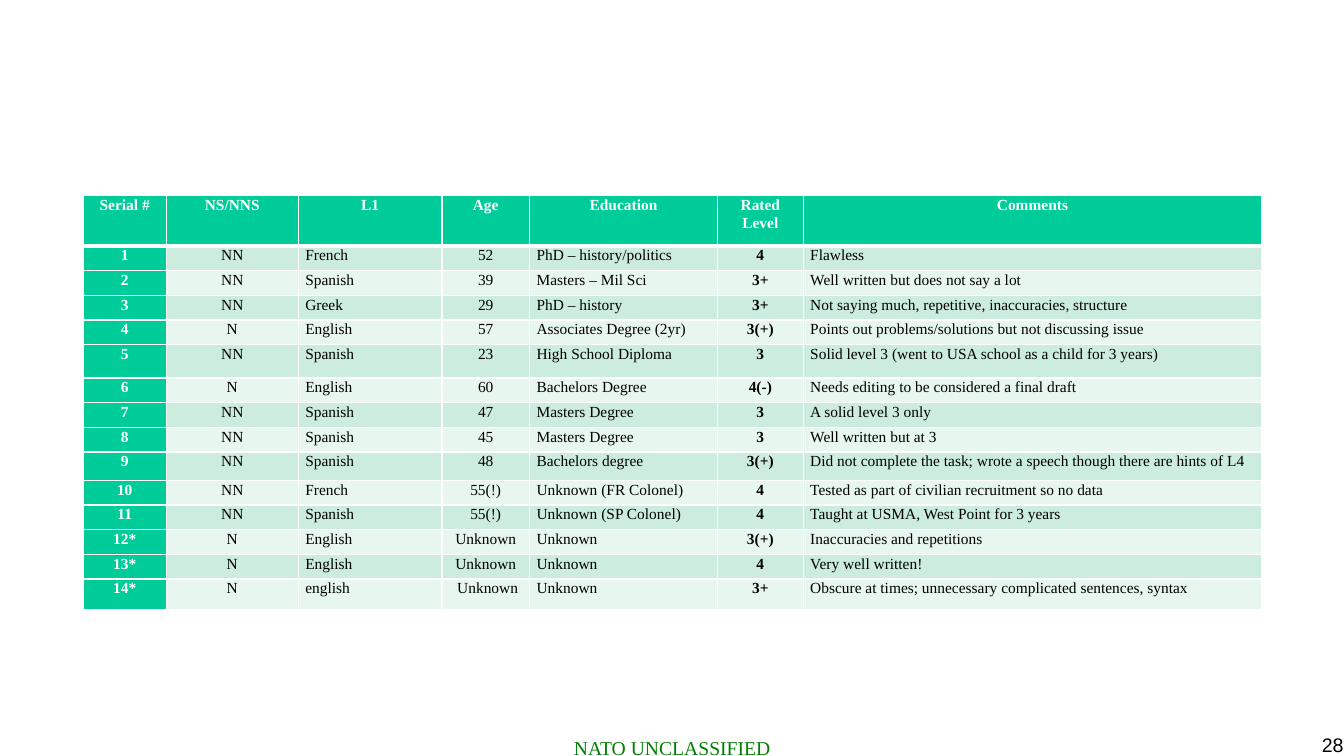
from dataclasses import dataclass

from lxml import etree
from pptx import Presentation
from pptx import util as u
from pptx.dml.color import RGBColor
from pptx.enum import text
from pptx.oxml import ns

PX = 4572  # EMU per px, 200 px to the inch


@dataclass(frozen=True)
class Theme:
    serif: str = "Times New Roman"
    sans: str = "Arial"
    white: str = "FFFFFF"
    black: str = "000000"
    marking: str = "008000"
    accent: str = "00CC99"
    bands: tuple = ("CCECDE", "E7F6EF")
    table_size: int = 11
    footer_size: int = 14
    thin: int = 1
    thick: int = 3


THEME = Theme()
LEFT, CENTER, RIGHT = text.PP_ALIGN.LEFT, text.PP_ALIGN.CENTER, text.PP_ALIGN.RIGHT

COLUMN_WIDTHS = (165, 262, 285, 174, 373, 170, 910)
COLUMN_ALIGNS = (CENTER, CENTER, LEFT, CENTER, LEFT, CENTER, LEFT)
BOLD_COLUMNS = (0, 5)
HEADER_HEIGHT, ROW_HEIGHT = 100, 49
TALL_ROWS = {5: 66, 9: 56, 14: 60}

HEADER = ("Serial #", "NS/NNS", "L1", "Age", "Education", "Rated Level", "Comments")
CANDIDATES = (
    ("1", "NN", "French", "52", "PhD – history/politics", "4", "Flawless"),
    ("2", "NN", "Spanish", "39", "Masters – Mil Sci", "3+", "Well written but does not say a lot"),
    ("3", "NN", "Greek", "29", "PhD – history", "3+",
     "Not saying much, repetitive, inaccuracies, structure"),
    ("4", "N", "English", "57", "Associates Degree (2yr)", "3(+)",
     "Points out problems/solutions but not discussing issue"),
    ("5", "NN", "Spanish", "23", "High School Diploma", "3",
     "Solid level 3 (went to USA school as a child for 3 years)"),
    ("6", "N", "English", "60", "Bachelors Degree", "4(-)",
     "Needs editing to be considered a final draft"),
    ("7", "NN", "Spanish", "47", "Masters Degree", "3", "A solid level 3 only"),
    ("8", "NN", "Spanish", "45", "Masters Degree", "3", "Well written but at 3"),
    ("9", "NN", "Spanish", "48", "Bachelors degree", "3(+)",
     "Did not complete the task; wrote a speech though there are hints of L4"),
    ("10", "NN", "French", "55(!)", "Unknown (FR Colonel)", "4",
     "Tested as part of civilian recruitment so no data"),
    ("11", "NN", "Spanish", "55(!)", "Unknown (SP Colonel)", "4",
     "Taught at USMA, West Point for 3 years"),
    ("12*", "N", "English", "Unknown", "Unknown", "3(+)", "Inaccuracies and repetitions"),
    ("13*", "N", "English", "Unknown", "Unknown", "4", "Very well written!"),
    ("14*", "N", "english", " Unknown", "Unknown", "3+",
     "Obscure at times; unnecessary complicated sentences, syntax"),
)


def style_paragraph(paragraph, align, font_name, size, color, bold=False):
    paragraph.alignment = align
    font = paragraph.font
    font.name, font.size, font.bold = font_name, u.Pt(size), bold
    font.color.rgb = RGBColor.from_string(color)


def set_borders(cell, top, bottom):
    """Draw white lines round a cell; they come before the fill in tcPr."""
    properties = cell._tc.get_or_add_tcPr()
    widths = {"a:lnL": THEME.thin, "a:lnR": THEME.thin, "a:lnT": top, "a:lnB": bottom}
    for index, (tag, width) in enumerate(widths.items()):
        line = etree.Element(ns.qn(tag), w=str(u.Pt(width)))
        fill = etree.SubElement(line, ns.qn("a:solidFill"))
        etree.SubElement(fill, ns.qn("a:srgbClr"), val=THEME.white)
        properties.insert(index, line)


def fill_cell(cell, wording, row, column):
    is_header = row == 0
    on_accent = is_header or column == 0
    cell.margin_left = cell.margin_right = 14 * PX
    cell.margin_top = cell.margin_bottom = 0
    cell.fill.solid()
    background = THEME.accent if on_accent else THEME.bands[(row - 1) % 2]
    cell.fill.fore_color.rgb = RGBColor.from_string(background)
    set_borders(cell, top=THEME.thick if row == 1 else THEME.thin,
                bottom=THEME.thick if is_header else THEME.thin)

    cell.text = wording
    paragraph = cell.text_frame.paragraphs[0]
    paragraph.line_spacing = 1.07
    style_paragraph(paragraph, CENTER if is_header else COLUMN_ALIGNS[column],
                    THEME.serif, THEME.table_size,
                    THEME.white if on_accent else THEME.black,
                    bold=is_header or column in BOLD_COLUMNS)


def add_results_table(slide, left, top):
    rows = (HEADER, *CANDIDATES)
    heights = [HEADER_HEIGHT] + [TALL_ROWS.get(row, ROW_HEIGHT) for row in range(1, len(rows))]
    table = slide.shapes.add_table(
        len(rows), len(HEADER), left * PX, top * PX,
        sum(COLUMN_WIDTHS) * PX, sum(heights) * PX).table
    for table_column, width in zip(table.columns, COLUMN_WIDTHS):
        table_column.width = width * PX
    for row, (wordings, height) in enumerate(zip(rows, heights)):
        table.rows[row].height = height * PX
        for column, wording in enumerate(wordings):
            fill_cell(table.cell(row, column), wording, row, column)


def add_footer_text(slide, box, wording, align, font_name, color):
    shape = slide.shapes.add_textbox(*(length * PX for length in box))
    shape.text_frame.word_wrap = True
    shape.text_frame.text = wording
    style_paragraph(shape.text_frame.paragraphs[0], align, font_name, THEME.footer_size, color)


def main():
    presentation = Presentation()
    presentation.slide_width, presentation.slide_height = 2667 * PX, 1500 * PX
    slide = presentation.slides.add_slide(presentation.slide_layouts[6])

    # Footer: classification and slide number
    add_footer_text(slide, (912, 1450, 844, 62), "NATO UNCLASSIFIED",
                    CENTER, THEME.serif, THEME.marking)
    add_footer_text(slide, (2112, 1444, 574, 104), "28", RIGHT, THEME.sans, THEME.black)

    # Table of candidates
    add_results_table(slide, left=165, top=388)
    presentation.save("out.pptx")


if __name__ == "__main__":
    main()
